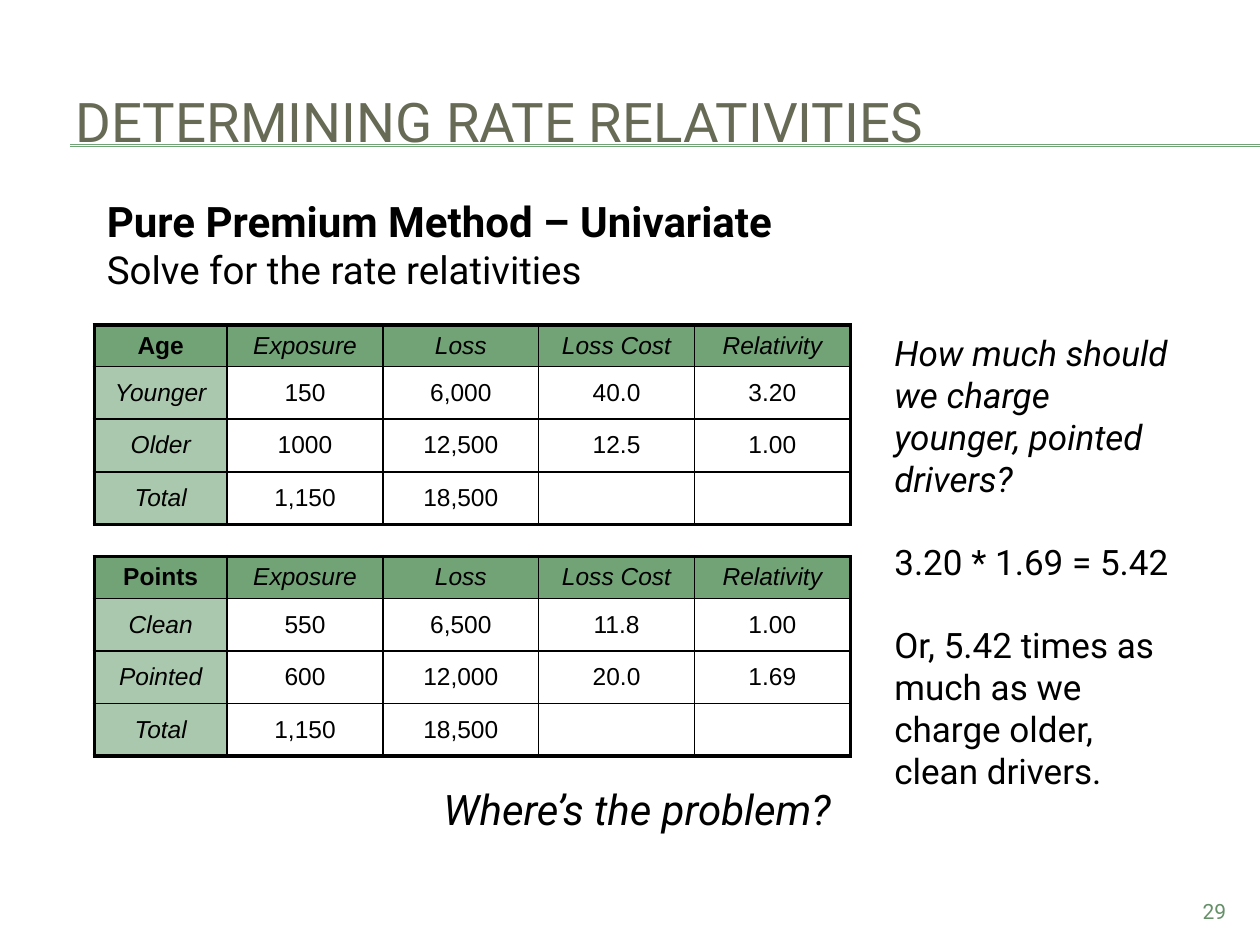
from lxml.etree import SubElement
from pptx import Presentation
from pptx.dml.color import RGBColor
from pptx.enum.shapes import MSO_CONNECTOR
from pptx.enum.text import MSO_ANCHOR, MSO_AUTO_SIZE, PP_ALIGN
from pptx.oxml.ns import qn
from pptx.util import Cm, Pt

COLORS = {
    "black": "000000",
    "title": "676A55",
    "green": "72A376",
    "light_green": "AAC8AD",
    "number": "659068",
}
HEADINGS = ["Exposure", "Loss", "Loss Cost", "Relativity"]
AGE_ROWS = [
    ["Age", *HEADINGS],
    ["Younger", "150", "6,000", "40.0", "3.20"],
    ["Older", "1000", "12,500", "12.5", "1.00"],
    ["Total", "1,150", "18,500", "", ""],
]
POINTS_ROWS = [
    ["Points", *HEADINGS],
    ["Clean", "550", "6,500", "11.8", "1.00"],
    ["Pointed", "600", "12,000", "20.0", "1.69"],
    ["Total", "1,150", "18,500", "", ""],
]
COLUMN_WIDTHS = [2.68] + [3.14] * 4
ROW_HEIGHTS = [0.84] + [1.06] * 3
THIN, THICK = 1, 2.25


def rgb(name):
    return RGBColor.from_string(COLORS[name])


def set_font(p, size, color="black", bold=False, italic=False, name="Roboto"):
    font = p.font
    font.name, font.size = name, Pt(size)
    font.bold, font.italic = bold, italic
    font.color.rgb = rgb(color)


def place(shape, left, top, width, height):
    shape.left, shape.top = Cm(left), Cm(top)
    shape.width, shape.height = Cm(width), Cm(height)


def add_paragraph(tf, index, text):
    p = tf.add_paragraph() if index else tf.paragraphs[0]
    p.text = text
    return p


def fill_title(s, text):
    title = s.shapes.title
    place(title, 1.27, 1.27, 24.13, 2.34)
    tf = title.text_frame
    tf.text = text
    tf.auto_size = MSO_AUTO_SIZE.NONE
    tf.vertical_anchor = MSO_ANCHOR.MIDDLE
    p = tf.paragraphs[0]
    p.alignment = PP_ALIGN.LEFT
    set_font(p, 31.2, "title")


def fill_body(s, lines):
    body = s.placeholders[1]
    place(body, 1.9, 3.81, 14.82, 2.24)
    tf = body.text_frame
    tf.auto_size = MSO_AUTO_SIZE.NONE
    for i, (text, size, bold) in enumerate(lines):
        p = add_paragraph(tf, i, text)
        p.space_before = Pt(0)
        set_font(p, size, bold=bold)
        pPr = p._p.get_or_add_pPr()
        pPr.set("marL", "0")
        pPr.set("indent", "0")
        pPr.insert_element_before(
            pPr.makeelement(qn("a:buNone"), {}), "a:tabLst", "a:defRPr", "a:extLst"
        )


def add_text(s, box, lines, size, color="black", align=PP_ALIGN.LEFT, gap=0):
    tf = s.shapes.add_textbox(*map(Cm, box)).text_frame
    tf.word_wrap = True
    for i, (text, italic) in enumerate(lines):
        p = add_paragraph(tf, i, text)
        p.alignment = align
        p.space_before = Pt(gap if i else 0)
        set_font(p, size, color, italic=italic)


def add_rule(s, y):
    line = s.shapes.add_connector(
        MSO_CONNECTOR.STRAIGHT, Cm(1.42), Cm(y), Cm(25.4), Cm(y)
    )
    line.line.color.rgb = rgb("green")
    line.line.width = Pt(0.75)
    SubElement(line._element.spPr, qn("a:effectLst"))


def set_borders(cell, widths):
    tcPr = cell._tc.get_or_add_tcPr()
    for side, width in zip("LRTB", widths):
        ln = SubElement(tcPr, qn(f"a:ln{side}"), w=str(Pt(width)))
        fill = SubElement(ln, qn("a:solidFill"))
        SubElement(fill, qn("a:srgbClr"), val=COLORS["black"])


def format_cell(cell, text, row, col, last_row, last_col):
    edges = (col == 0, col == last_col, row == 0, row == last_row)
    set_borders(cell, [THICK if edge else THIN for edge in edges])
    if row == 0 or col == 0:
        cell.fill.solid()
        cell.fill.fore_color.rgb = rgb("green" if row == 0 else "light_green")
    else:
        cell.fill.background()
    cell.vertical_anchor = MSO_ANCHOR.MIDDLE
    cell.text = text
    p = cell.text_frame.paragraphs[0]
    p.alignment = PP_ALIGN.CENTER
    corner = row == 0 and col == 0
    heading = row == 0 or col == 0
    set_font(p, 14, bold=corner, italic=heading and not corner, name="Arial")


def add_rate_table(s, top, rows):
    table = s.shapes.add_table(
        len(rows), len(rows[0]), Cm(1.9), Cm(top),
        Cm(sum(COLUMN_WIDTHS)), Cm(sum(ROW_HEIGHTS)),
    ).table
    table.first_row = table.horz_banding = False
    for column, width in zip(table.columns, COLUMN_WIDTHS):
        column.width = Cm(width)
    for i, (values, height) in enumerate(zip(rows, ROW_HEIGHTS)):
        table.rows[i].height = Cm(height)
        for j, text in enumerate(values):
            format_cell(table.cell(i, j), text, i, j, len(rows) - 1, len(values) - 1)


def main():
    prs = Presentation()
    prs.slide_width, prs.slide_height = Cm(25.4), Cm(19.05)
    s = prs.slides.add_slide(prs.slide_layouts[1])
    for y in (2.92, 2.95):
        add_rule(s, y)
    fill_title(s, "DETERMINING RATE RELATIVITIES")
    fill_body(s, [
        ("Pure Premium Method – Univariate", 24, True),
        ("Solve for the rate relativities", 22, False),
    ])
    add_rate_table(s, 6.55, AGE_ROWS)
    add_rate_table(s, 11.22, POINTS_ROWS)
    add_text(s, (17.78, 6.55, 6.35, 7.95), [
        ("How much should we charge younger, pointed drivers?", True),
        ("3.20 * 1.69 = 5.42", False),
        ("Or, 5.42 times as much as we charge older, clean drivers.", False),
    ], 20, gap=23.5)
    add_text(s, (8.69, 15.67, 9.09, 1.27), [("Where’s the problem?", True)], 24)
    add_text(s, (22.86, 17.98, 2.11, 0.69), [("29", False)], 12, "number",
             PP_ALIGN.RIGHT)
    prs.save("out.pptx")


if __name__ == "__main__":
    main()
